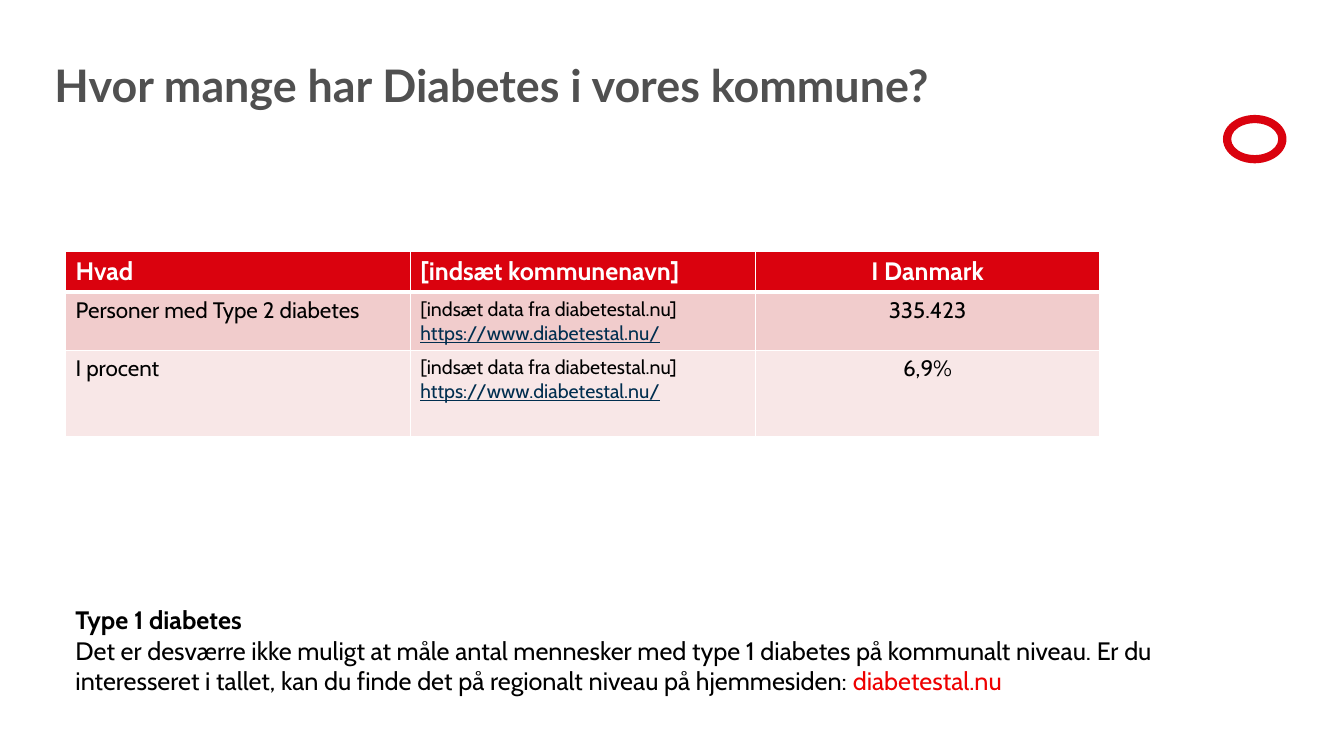
from lxml import etree
from pptx import Presentation
from pptx import util as u
from pptx.dml.color import RGBColor
from pptx.enum import shapes, text
from pptx.oxml.ns import qn

RED, WHITE, BLACK, GREY, NAVY = "DA020E", "FFFFFF", "000000", "505050", "002E4F"
LINK_RED = "EE0000"


def rgb(value):
    return RGBColor.from_string(value)


class SlideBuilder:
    """Holds the style and the current slide."""

    body_font = "Cabin"
    title_font = "Lato"

    def __init__(self, prs):
        self.s = prs.slides.add_slide(prs.slide_layouts[5])

    def style(self, font, size, color, bold=False, name=None):
        font.name = name or self.body_font
        font.size = u.Pt(size)
        font.bold = bold
        font.color.rgb = rgb(color)

    def place(self, sp, left, top, width, height):
        sp.left, sp.top = u.Inches(left), u.Inches(top)
        sp.width, sp.height = u.Inches(width), u.Inches(height)

    def title(self, words, box):
        sp = self.s.shapes.title
        self.place(sp, *box)
        tf = sp.text_frame
        tf.auto_size = text.MSO_AUTO_SIZE.NONE
        tf.word_wrap = True
        tf.vertical_anchor = text.MSO_ANCHOR.BOTTOM
        tf.margin_left = tf.margin_right = tf.margin_top = 0
        tf.margin_bottom = u.Inches(0.5)
        p = tf.paragraphs[0]
        p.text = words
        p.alignment = text.PP_ALIGN.LEFT
        p.line_spacing = u.Pt(36)
        self.style(p.font, 32, GREY, True, self.title_font)

    def emblem(self, box):
        sp = self.s.shapes.add_shape(shapes.MSO_SHAPE.DONUT, *map(u.Inches, box))
        sp.shadow.inherit = False
        sp.adjustments[0] = 0.17
        sp.fill.solid()
        sp.fill.fore_color.rgb = rgb(RED)
        sp.line.fill.background()

    def border(self, cell, side, points):
        tc_pr = cell._tc.get_or_add_tcPr()
        ln = etree.SubElement(tc_pr, qn(f"a:ln{side}"), w=str(u.Pt(points)))
        fill = etree.SubElement(ln, qn("a:solidFill"))
        etree.SubElement(fill, qn("a:srgbClr"), val=WHITE)

    def cell(self, cell, lines, fill, size, color, bold, centred, widths):
        for side, points in widths.items():
            self.border(cell, side, points)
        cell.fill.solid()
        cell.fill.fore_color.rgb = rgb(fill)
        p = cell.text_frame.paragraphs[0]
        if centred:
            p.alignment = text.PP_ALIGN.CENTER
        label, *links = lines
        p.add_run().text = label
        if not links:
            self.style(p.font, size, color, bold)
            return
        self.style(p.runs[0].font, size, color, bold)
        for link in links:
            p.add_line_break()
            r = p.add_run()
            r.text = link
            self.style(r.font, size, NAVY)
            r.font.underline = True

    def table(self, rows, fills, heights, box):
        frame = self.s.shapes.add_table(len(rows), len(rows[0]), *map(u.Inches, box))
        table = frame.table
        for i, (row, fill, height) in enumerate(zip(rows, fills, heights)):
            table.rows[i].height = u.Inches(height)
            header = i == 0
            widths = {"L": 1, "R": 1, "T": 3 if i == 1 else 1, "B": 3 if header else 1}
            for j, lines in enumerate(row):
                size = 18 if header else 14 if len(lines) > 1 else 16
                color = WHITE if header else BLACK
                self.cell(table.cell(i, j), lines, fill, size, color, header, j == 2, widths)

    def note(self, heading, words, link, box):
        tf = self.s.shapes.add_textbox(*map(u.Inches, box)).text_frame
        tf.word_wrap = True
        tf.auto_size = text.MSO_AUTO_SIZE.SHAPE_TO_FIT_TEXT
        p = tf.paragraphs[0]
        for words_part, color, bold in ((heading, BLACK, True), (words, BLACK, False),
                                        (link, LINK_RED, False)):
            r = p.add_run()
            r.text = words_part
            self.style(r.font, 18, color, bold)
            if bold:
                p.add_line_break()


def main():
    prs = Presentation()
    prs.slide_width, prs.slide_height = u.Inches(13.33), u.Inches(7.5)
    slide = SlideBuilder(prs)

    # Heading and emblem
    slide.emblem((12.13, 1.14, 0.63, 0.48))
    slide.title("Hvor mange har Diabetes i vores kommune?", (0.54, 0.43, 9.96, 1.18))

    # Table of figures
    source = ["[indsæt data fra diabetestal.nu]", "https://www.diabetestal.nu/"]
    rows = [
        [["Hvad"], ["[indsæt kommunenavn]"], ["I Danmark"]],
        [["Personer med Type 2 diabetes"], source, ["335.423"]],
        [["I procent"], source, ["6,9%"]],
    ]
    slide.table(rows, [RED, "F1CCCC", "F8E7E7"], [0.41, 0.57, 0.86],
                (0.65, 2.49, 10.26, 1.84))

    # Note on type 1
    slide.note(
        "Type 1 diabetes",
        "Det er desværre ikke muligt at måle antal mennesker med type 1 diabetes på "
        "kommunalt niveau. Er du interesseret i tallet, kan du finde det på regionalt "
        "niveau på hjemmesiden: ",
        "diabetestal.nu",
        (0.65, 5.95, 10.98, 1.01))

    prs.save("out.pptx")


if __name__ == "__main__":
    main()
